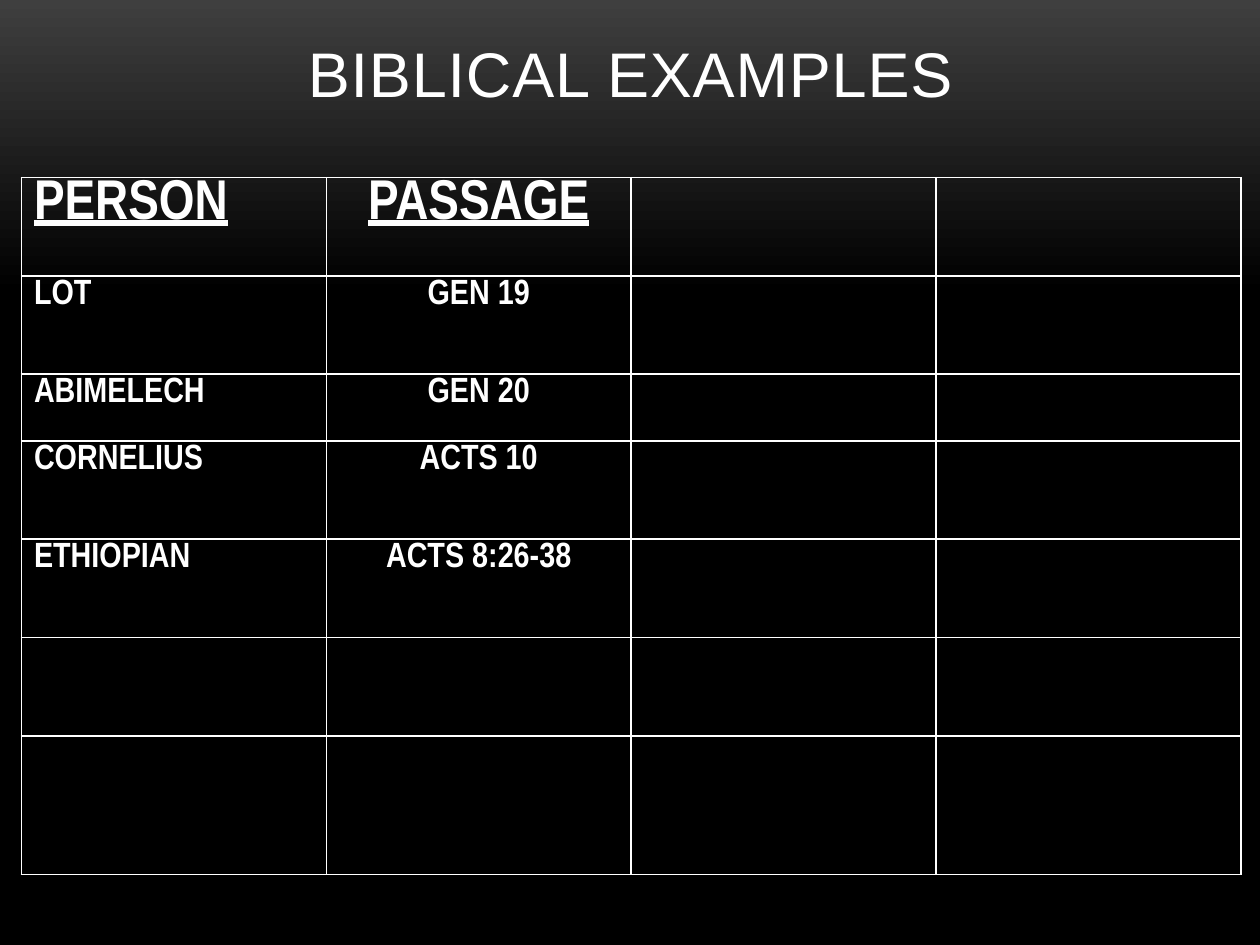
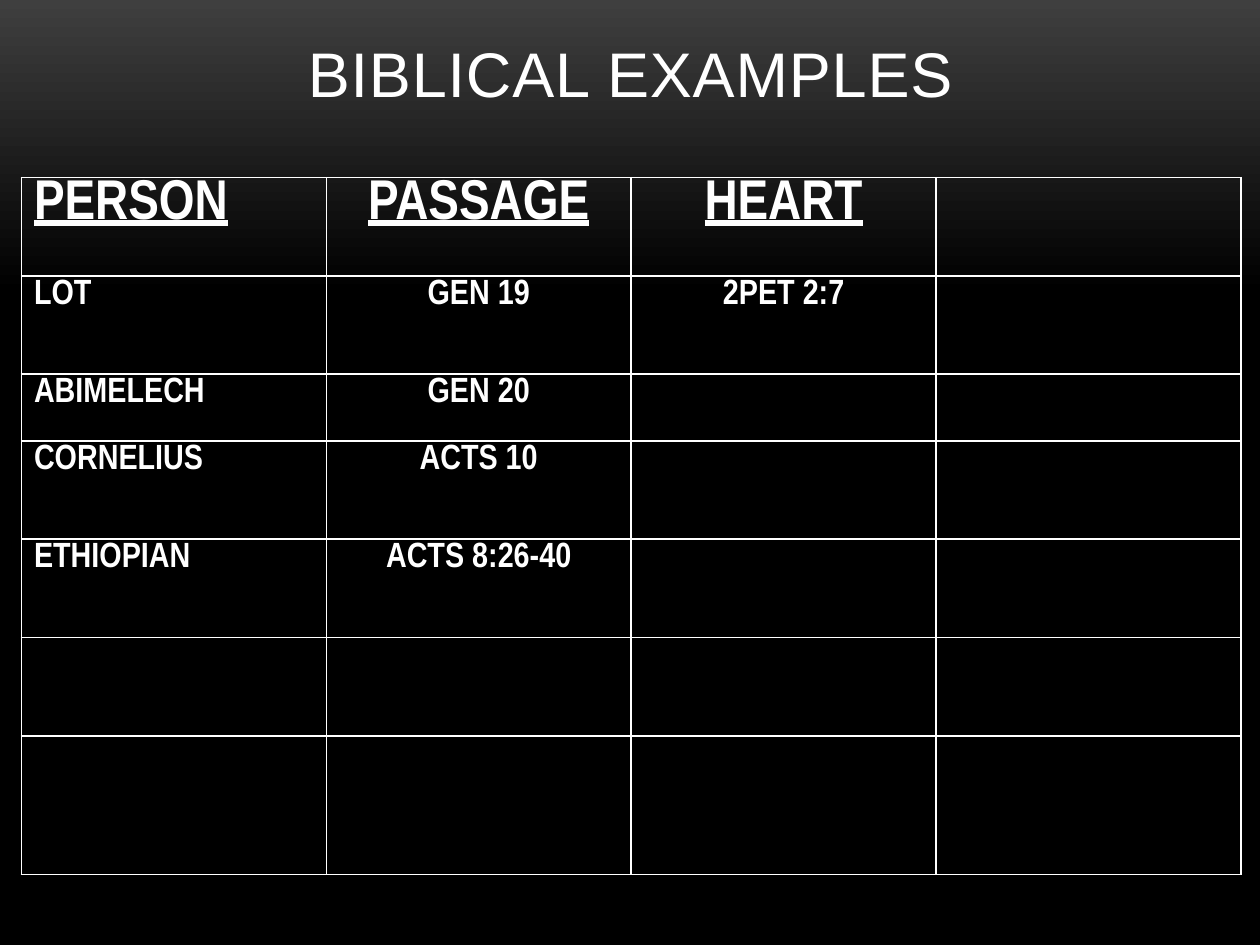
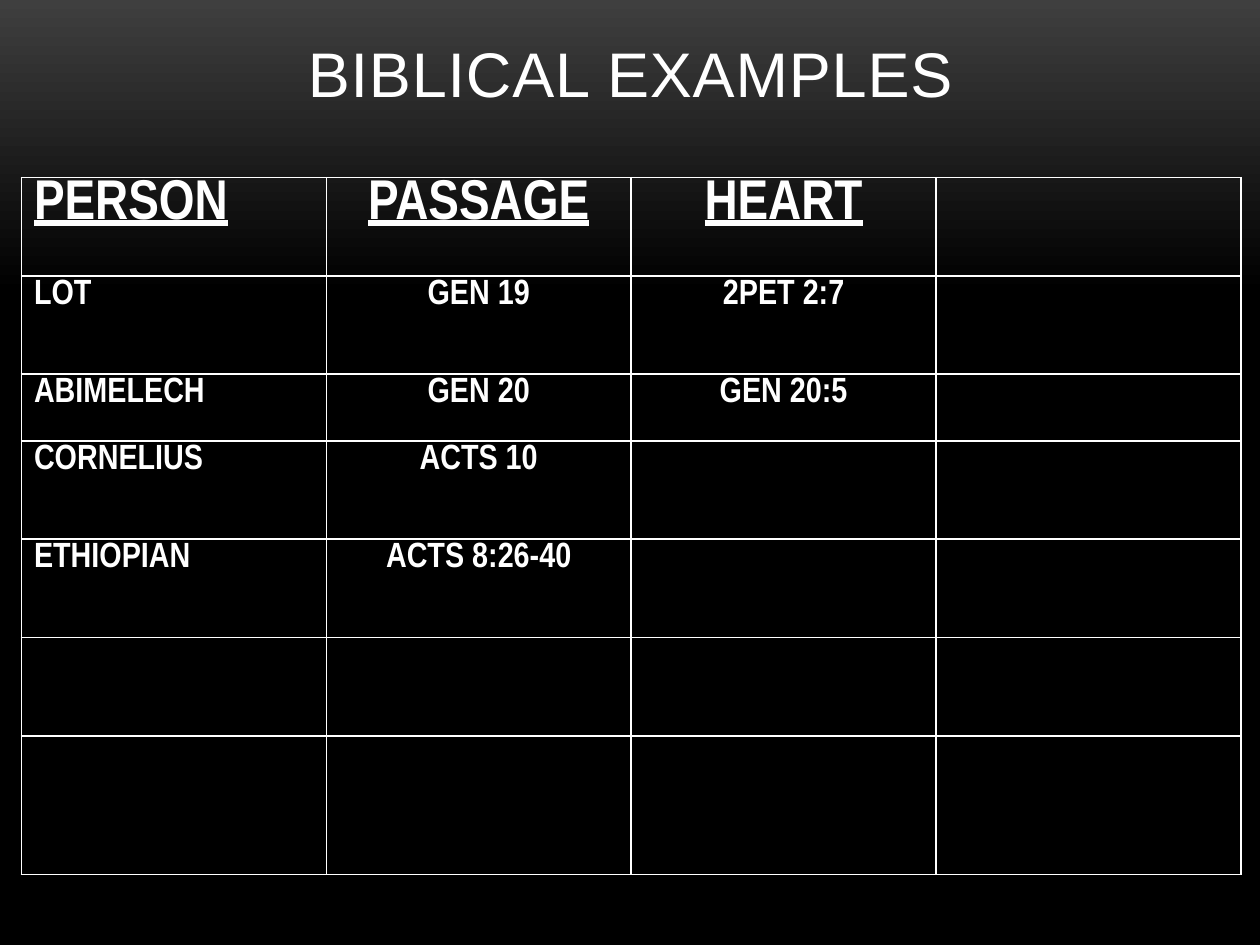
from copy import deepcopy

from lxml.etree import SubElement
from pptx import Presentation
from pptx.dml.color import RGBColor
from pptx.enum.text import MSO_ANCHOR as Anchor, PP_ALIGN as Align
from pptx.oxml.ns import qn
from pptx.util import Inches, Pt

WHITE, BLACK, CHARCOAL = "FFFFFF", "000000", "3F3F3F"
TITLE_FONT, TABLE_FONT = "Arial", "Arial Narrow"
COLUMN_COUNT, COLUMN_WIDTH = 4, 2.42
ROW_HEIGHTS = [0.78, 0.78, 0.53, 0.78, 0.78, 0.78, 1.1]
PEOPLE = ["PERSON", "LOT", "ABIMELECH", "CORNELIUS", "ETHIOPIAN"]
PASSAGES = ["PASSAGE", "GEN 19", "GEN 20", "ACTS 10"]


def color(hex_string):
    """Return the colour for a hex string."""
    return RGBColor.from_string(hex_string)


def style_font(font, name, size, bold=False, underline=False):
    """Apply the white text style to a font."""
    font.name = name
    font.size = Pt(size)
    font.bold = bold
    font.underline = underline
    font.color.rgb = color(WHITE)


def paint_background(slide):
    """Fade the background from charcoal at the top to black."""
    fill = slide.background.fill
    fill.gradient()
    fill.gradient_angle = 270
    for stop, hex_string, position in zip(fill.gradient_stops, (CHARCOAL, BLACK), (0, 0.31)):
        stop.color.rgb = color(hex_string)
        stop.position = position
    stop_list = next(slide.element.iter(qn("a:gsLst")))
    last_stop = deepcopy(stop_list[-1])
    last_stop.set("pos", "100000")
    stop_list.append(last_stop)


def add_title(slide, text):
    """Add the centred, slightly spaced title."""
    box = slide.shapes.add_textbox(Inches(0.67), Inches(0), Inches(8.67), Inches(0.92))
    text_frame = box.text_frame
    text_frame.word_wrap = True
    text_frame.vertical_anchor = Anchor.BOTTOM
    text_frame.text = text
    paragraph = text_frame.paragraphs[0]
    paragraph.alignment = Align.CENTER
    run = paragraph.runs[0]
    style_font(run.font, TITLE_FONT, 36)
    run.font._element.set("spc", "50")


def add_borders(cell):
    """Draw a thin white line on every side of a cell."""
    properties = cell._tc.get_or_add_tcPr()
    for side in ("lnL", "lnR", "lnT", "lnB"):
        line = SubElement(properties, qn(f"a:{side}"), w=str(Pt(1)))
        fill = SubElement(line, qn("a:solidFill"))
        SubElement(fill, qn("a:srgbClr"), val=WHITE)


def write_cell(cell, text, is_header, alignment):
    """Write bold text in a cell, larger and underlined in the header."""
    cell.text_frame.text = text
    paragraph = cell.text_frame.paragraphs[0]
    paragraph.alignment = alignment
    paragraph.line_spacing = 0.85
    style_font(paragraph.runs[0].font, TABLE_FONT, 32 if is_header else 20, True, is_header)


def add_examples_table(slide, text_columns):
    """Add the grid and fill it column by column."""
    table = slide.shapes.add_table(
        len(ROW_HEIGHTS), COLUMN_COUNT, Inches(0.17), Inches(1.41),
        Inches(COLUMN_COUNT * COLUMN_WIDTH), Inches(sum(ROW_HEIGHTS))).table
    table.first_row = table.horz_banding = False
    for column in table.columns:
        column.width = Inches(COLUMN_WIDTH)
    for row, height in zip(table.rows, ROW_HEIGHTS):
        row.height = Inches(height)
    for cell in table.iter_cells():
        add_borders(cell)
        cell.fill.background()
    for column_index, texts in enumerate(text_columns):
        alignment = Align.CENTER if column_index else Align.LEFT
        for row_index, text in enumerate(texts):
            write_cell(table.cell(row_index, column_index), text, row_index == 0, alignment)


def main():
    """Build the three steps of the examples table."""
    presentation = Presentation()
    presentation.slide_width = Inches(10)
    presentation.slide_height = Inches(7.5)
    steps = [
        ("ACTS 8:26-38", []),
        ("ACTS 8:26-40", ["HEART", "2PET 2:7"]),
        ("ACTS 8:26-40", ["HEART", "2PET 2:7", "GEN 20:5"]),
    ]
    for ethiopian_passage, hearts in steps:
        slide = presentation.slides.add_slide(presentation.slide_layouts[6])
        paint_background(slide)
        add_title(slide, "BIBLICAL EXAMPLES")
        add_examples_table(slide, [PEOPLE, PASSAGES + [ethiopian_passage], hearts])
    presentation.save("out.pptx")


if __name__ == "__main__":
    main()
